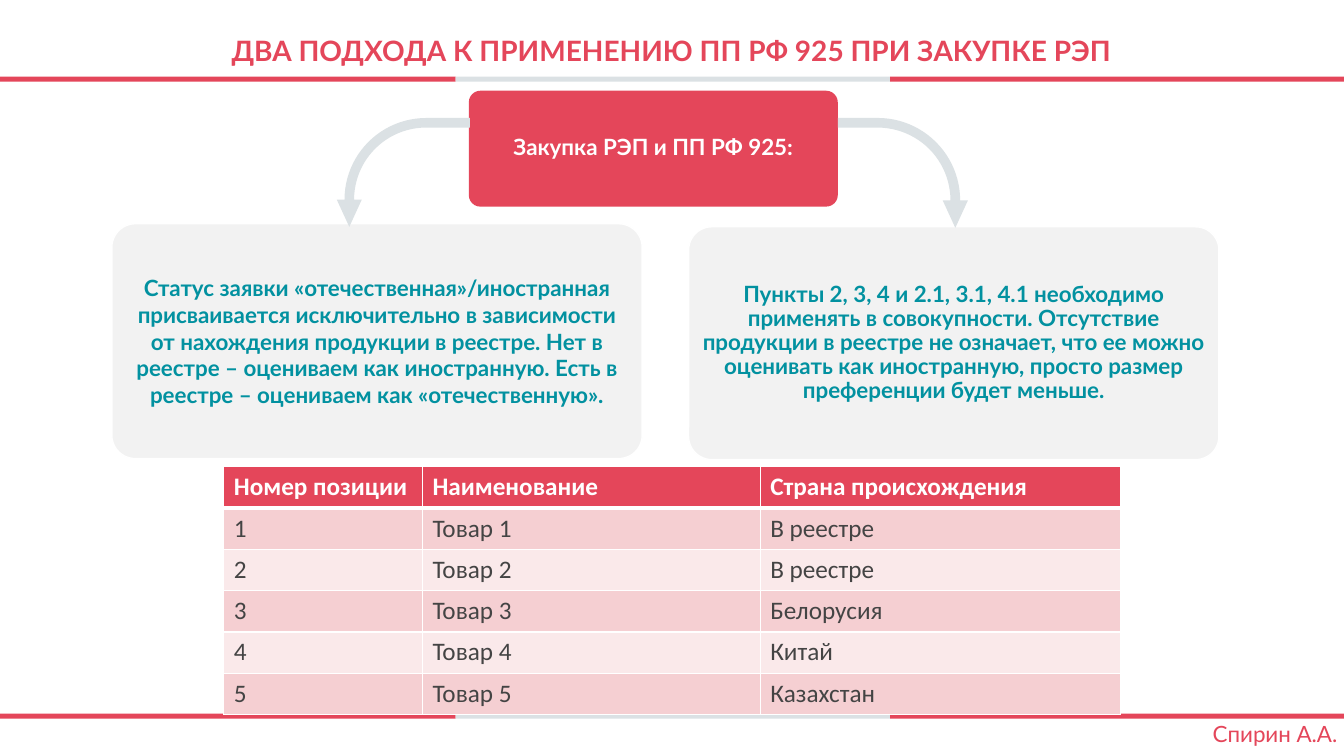
from pptx import Presentation
from pptx import util as u
from pptx.dml.color import RGBColor
from pptx.enum import shapes, text
from pptx.oxml import parse_xml
from pptx.oxml.ns import nsdecls

COLORS = {
    "red": "E4465A", "silver": "DBE1E4", "panel": "F2F2F2", "teal": "0291A0",
    "white": "FFFFFF", "ink": "444444", "odd": "F5CFD2", "even": "FAE9EA",
}


def rgb(color):
    return RGBColor.from_string(COLORS[color])


class SlideBuilder:
    font = "Lato"
    table_font = "Calibri"

    def __init__(self, slide):
        self.slide = slide

    def add_words(self, frame, words, size, color, bold=False, align=None, spacing=None, font=None):
        paragraph = frame.paragraphs[0]
        if align is not None:
            paragraph.alignment = align
        if spacing is not None:
            paragraph.line_spacing = spacing
        run = paragraph.add_run()
        run.text = words
        run.font.name = font or self.font
        run.font.size = u.Pt(size)
        run.font.bold = bold
        run.font.color.rgb = rgb(color)

    def title(self, words, box):
        heading = self.slide.shapes.title
        heading.left, heading.top, heading.width, heading.height = map(u.Inches, box)
        frame = heading.text_frame
        frame.word_wrap = True
        frame.auto_size = text.MSO_AUTO_SIZE.NONE
        frame.vertical_anchor = text.MSO_ANCHOR.MIDDLE
        self.add_words(frame, words, 20, "red", True, text.PP_ALIGN.CENTER, 0.9)

    def shape(self, kind, box, fill, outline=None, adjustments=()):
        drawn = self.slide.shapes.add_shape(kind, *map(u.Inches, box))
        drawn.shadow.inherit = False
        drawn.fill.solid()
        drawn.fill.fore_color.rgb = rgb(fill)
        if outline:
            drawn.line.color.rgb = rgb(outline)
            drawn.line.width = u.Pt(1)
        else:
            drawn.line.fill.background()
        for index, value in enumerate(adjustments):
            drawn.adjustments[index] = value
        return drawn

    def stripe(self, top):
        for left, right, color in ((0, 4.52, "red"), (4.52, 8.83, "silver"), (8.83, 13.33, "red")):
            self.shape(shapes.MSO_SHAPE.RECTANGLE, (left, top, right - left, 0.05), color)

    def card(self, words, box, fill, color, outline=None, spacing=None):
        panel = self.shape(shapes.MSO_SHAPE.ROUNDED_RECTANGLE, box, fill, outline, (0.1,))
        frame = panel.text_frame
        frame.word_wrap = True
        frame.vertical_anchor = text.MSO_ANCHOR.MIDDLE
        frame.margin_left = frame.margin_right = u.Inches(0.07)
        frame.margin_top = frame.margin_bottom = u.Inches(0.07)
        self.add_words(frame, words, 16, color, True, text.PP_ALIGN.CENTER, spacing)

    def branch(self, box, mirrored=False):
        arrow = self.shape(shapes.MSO_SHAPE.BENT_ARROW, box, "silver",
                           adjustments=(0.088, 0.115, 0.25, 0.75))
        arrow.rotation = 90
        if mirrored:
            arrow._element.spPr.xfrm.set("flipV", "1")

    def label(self, words, box):
        note = self.slide.shapes.add_textbox(*map(u.Inches, box))
        note.text_frame.word_wrap = False
        self.add_words(note.text_frame, words, 16, "red")

    def border(self, cell, side, points):
        cell._tc.get_or_add_tcPr().append(parse_xml(
            f'<a:{side} {nsdecls("a")} w="{u.Pt(points)}"><a:solidFill>'
            f'<a:srgbClr val="{COLORS["white"]}"/></a:solidFill></a:{side}>'))

    def table(self, rows, left, top, widths, row_height):
        grid = self.slide.shapes.add_table(
            len(rows), len(widths), u.Inches(left), u.Inches(top),
            u.Inches(sum(widths)), u.Inches(row_height * len(rows))).table
        for column, width in zip(grid.columns, widths):
            column.width = u.Inches(width)
        for r, row in enumerate(rows):
            header = r == 0
            fill = "red" if header else ("even", "odd")[r % 2]
            for c, words in enumerate(row):
                cell = grid.cell(r, c)
                for side in ("lnL", "lnR", "lnT", "lnB"):
                    under_header = (r, side) in ((0, "lnB"), (1, "lnT"))
                    self.border(cell, side, 3 if under_header else 1)
                cell.fill.solid()
                cell.fill.fore_color.rgb = rgb(fill)
                self.add_words(cell.text_frame, words, 18, "white" if header else "ink",
                               header, font=self.table_font)


def main():
    deck = Presentation()
    deck.slide_width, deck.slide_height = u.Inches(13.33), u.Inches(7.5)
    page = SlideBuilder(deck.slides.add_slide(deck.slide_layouts[5]))

    for stripe_top in (0.76, 7.08):
        page.stripe(stripe_top)
    page.title("ДВА ПОДХОДА К ПРИМЕНЕНИЮ ПП РФ 925 ПРИ ЗАКУПКЕ РЭП", (2.14, 0.14, 9.04, 0.76))

    page.card("Закупка РЭП и ПП РФ 925:", (4.65, 0.9, 3.66, 1.15), "red", "white", spacing=0.9)
    page.card("Пункты 2, 3, 4 и 2.1, 3.1, 4.1 необходимо применять в совокупности. "
              "Отсутствие продукции в реестре не означает, что ее можно оценивать как "
              "иностранную, просто размер преференции будет меньше.",
              (6.83, 2.25, 5.26, 2.31), "panel", "teal", "white", 0.9)
    page.card("Статус заявки «отечественная»/иностранная присваивается исключительно в "
              "зависимости от нахождения продукции в реестре. Нет в реестре – оцениваем "
              "как иностранную. Есть в реестре – оцениваем как «отечественную».",
              (1.11, 2.22, 5.26, 2.33), "panel", "teal", "white")
    page.branch((3.46, 1.05, 1.08, 1.32), mirrored=True)
    page.branch((8.41, 1.07, 1.09, 1.29))

    origins = ("В реестре", "В реестре", "Белорусия", "Китай", "Казахстан")
    rows = [("Номер позиции", "Наименование", "Страна происхождения")]
    rows += [(str(n), f"Товар {n}", origin) for n, origin in enumerate(origins, 1)]
    page.table(rows, 2.22, 4.63, (1.97, 3.35, 3.57), 0.41)
    page.label("Спирин А.А.", (11.93, 7.1, 1.44, 0.37))

    deck.save("out.pptx")


if __name__ == "__main__":
    main()
